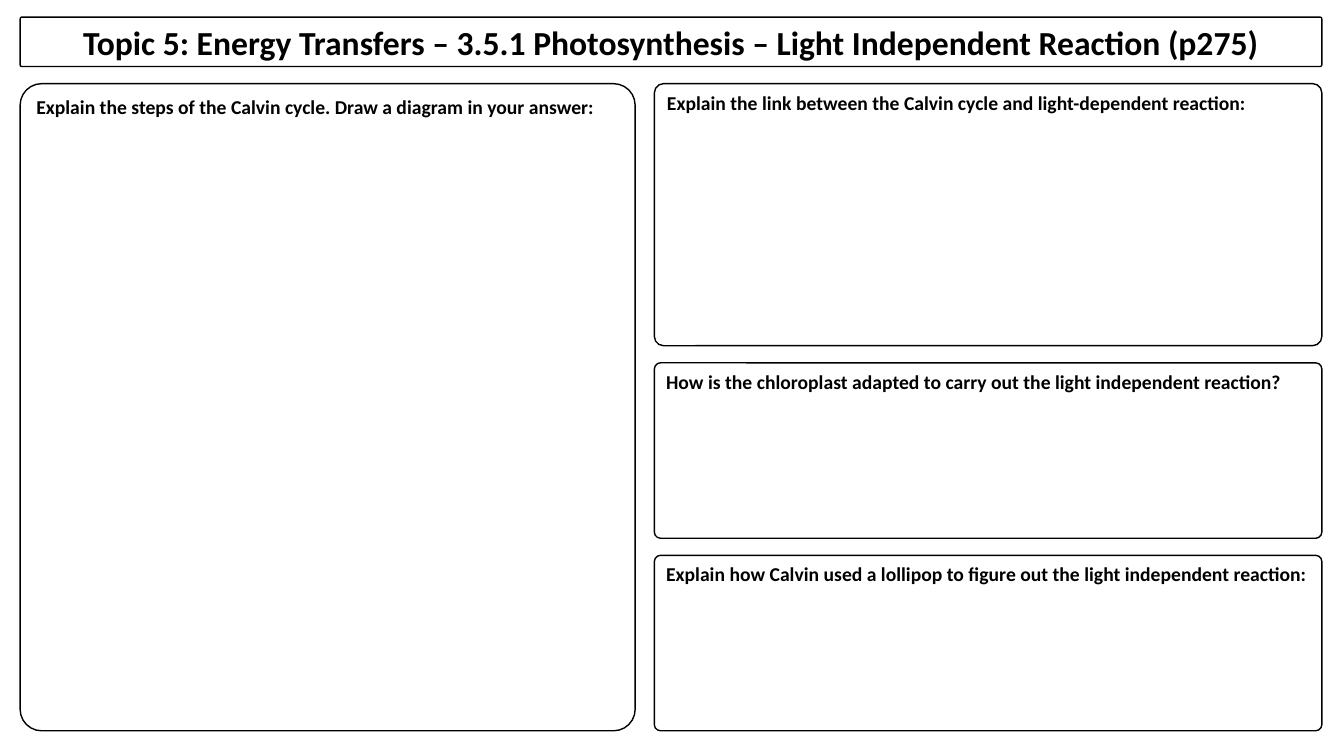
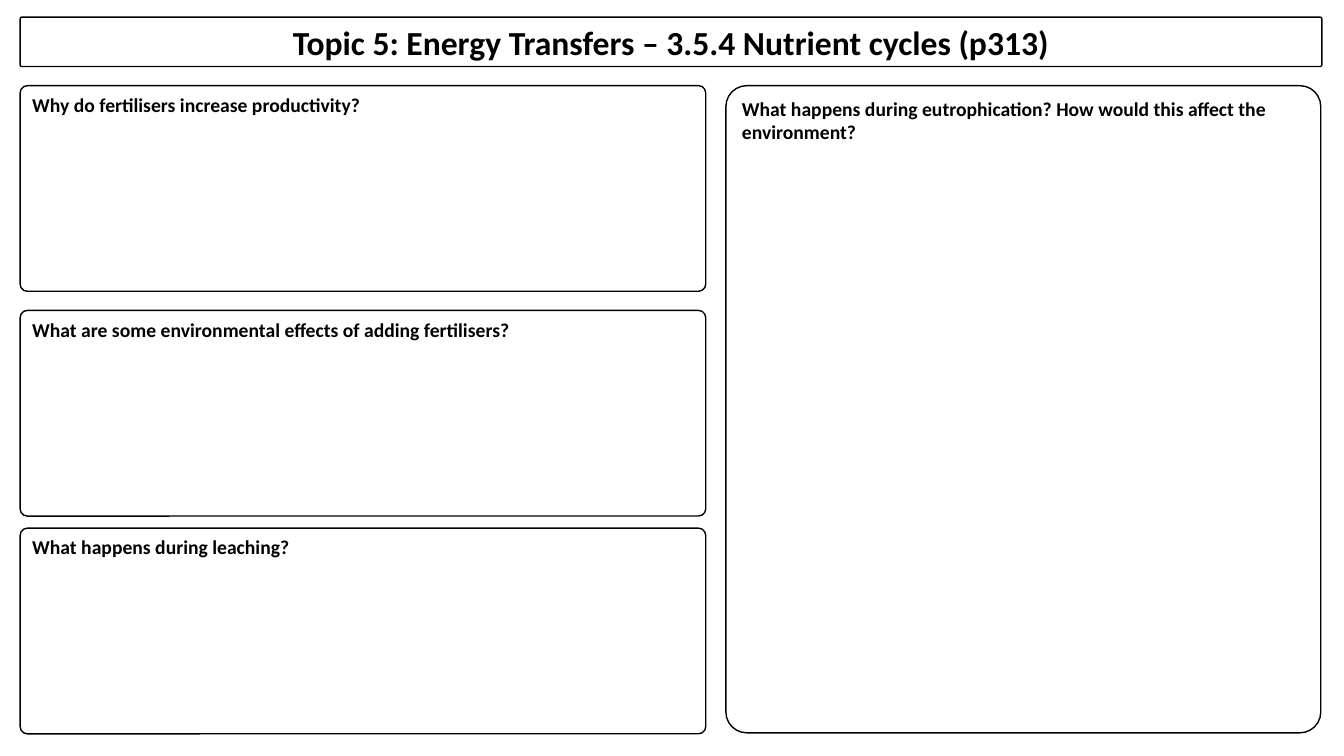
from pptx import Presentation
from pptx.dml.color import RGBColor
from pptx.enum.shapes import MSO_SHAPE
from pptx.enum.text import MSO_ANCHOR, PP_ALIGN
from pptx.util import Inches, Pt

# Shared style
FONT = "Calibri"
INK = "000000"
CORNER = 0.035
MARGIN = 0.2
TITLE_BOX = (MARGIN, 0.17, 12.91, 0.49)


def color(hex_value):
    return RGBColor.from_string(hex_value)


def add_box(slide, box, text, size=14, align=PP_ALIGN.LEFT, anchor=MSO_ANCHOR.TOP):
    """Outlined rounded box with one bold line of text."""
    shape = slide.shapes.add_shape(
        MSO_SHAPE.ROUNDED_RECTANGLE, *(Inches(length) for length in box))
    shape.adjustments[0] = CORNER
    shape.shadow.inherit = False
    shape.fill.background()
    shape.line.color.rgb = color(INK)
    shape.line.width = Pt(1)

    frame = shape.text_frame
    frame.word_wrap = True
    frame.vertical_anchor = anchor
    paragraph = frame.paragraphs[0]
    paragraph.alignment = align
    run = paragraph.add_run()
    run.text = text
    run.font.name = FONT
    run.font.size = Pt(size)
    run.font.bold = True
    run.font.color.rgb = color(INK)


def add_column(slide, left, width, questions):
    """Column of question boxes, each given as (top, height, text)."""
    for top, height, text in questions:
        add_box(slide, (left, top, width, height), text)


def add_worksheet(presentation, title, columns):
    """Blank slide with a title band and columns of questions."""
    slide = presentation.slides.add_slide(presentation.slide_layouts[6])
    add_box(slide, TITLE_BOX, title, 24, PP_ALIGN.CENTER, MSO_ANCHOR.MIDDLE)
    for left, width, questions in columns:
        add_column(slide, left, width, questions)


# Each worksheet: title, then columns as (left, width, questions)
WORKSHEETS = [
    ("Topic 5: Energy Transfers – 3.5.1 Photosynthesis – Light Independent Reaction (p275)", [
        (MARGIN, 6.1, [
            (0.83, 6.42, "Explain the steps of the Calvin cycle. Draw a diagram in your answer:"),
        ]),
        (6.49, 6.62, [
            (0.83, 2.6, "Explain the link between the Calvin cycle and light-dependent reaction:"),
            (3.6, 1.74, "How is the chloroplast adapted to carry out the light independent reaction?"),
            (5.51, 1.74, "Explain how Calvin used a lollipop to figure out the light independent reaction:"),
        ]),
    ]),
    ("Topic 5: Energy Transfers – 3.5.4 Nutrient cycles (p313)", [
        (MARGIN, 6.8, [
            (0.85, 2.04, "Why do fertilisers increase productivity?"),
            (3.08, 2.04, "What are some environmental effects of adding fertilisers?"),
            (5.24, 2.04, "What happens during leaching?"),
        ]),
        (7.2, 5.9, [
            (0.85, 6.42, "What happens during eutrophication? How would this affect the environment?"),
        ]),
    ]),
]


def main():
    presentation = Presentation()
    presentation.slide_width = Inches(13.33)
    presentation.slide_height = Inches(7.5)
    for title, columns in WORKSHEETS:
        add_worksheet(presentation, title, columns)
    presentation.save("out.pptx")


if __name__ == "__main__":
    main()
